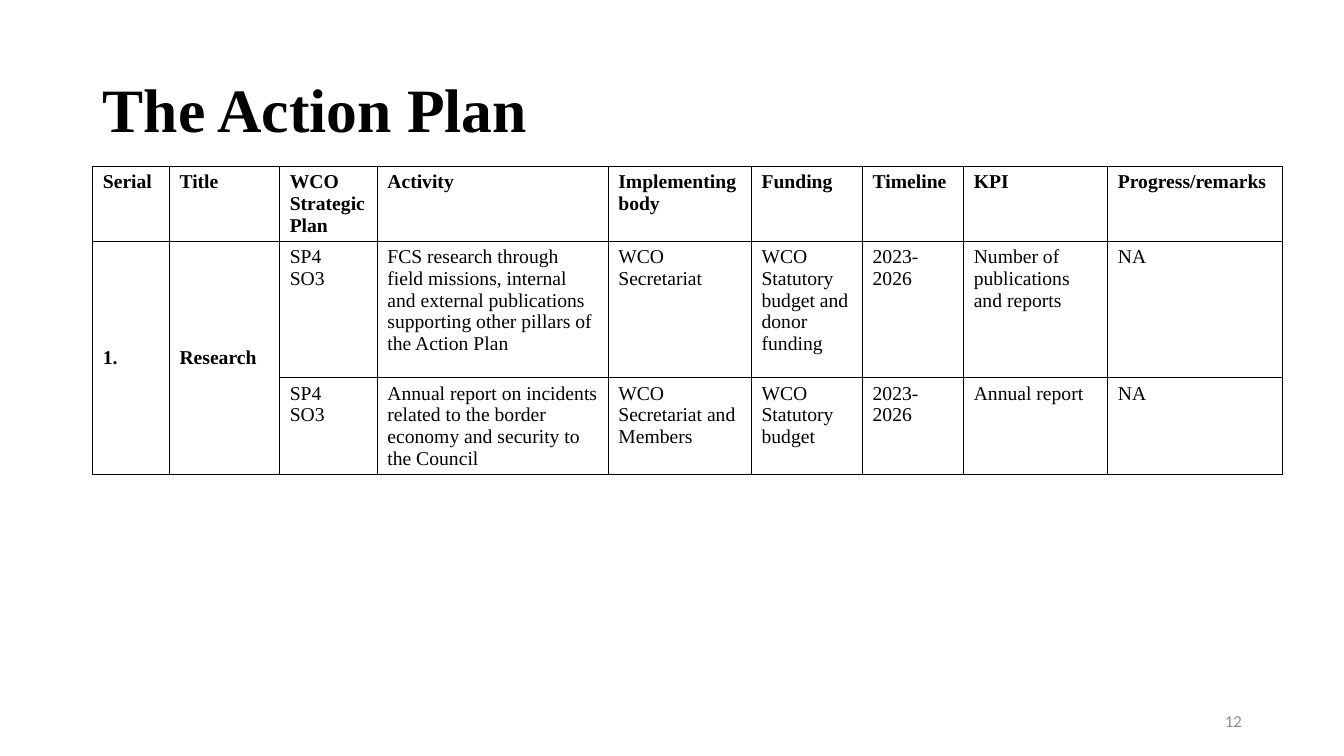
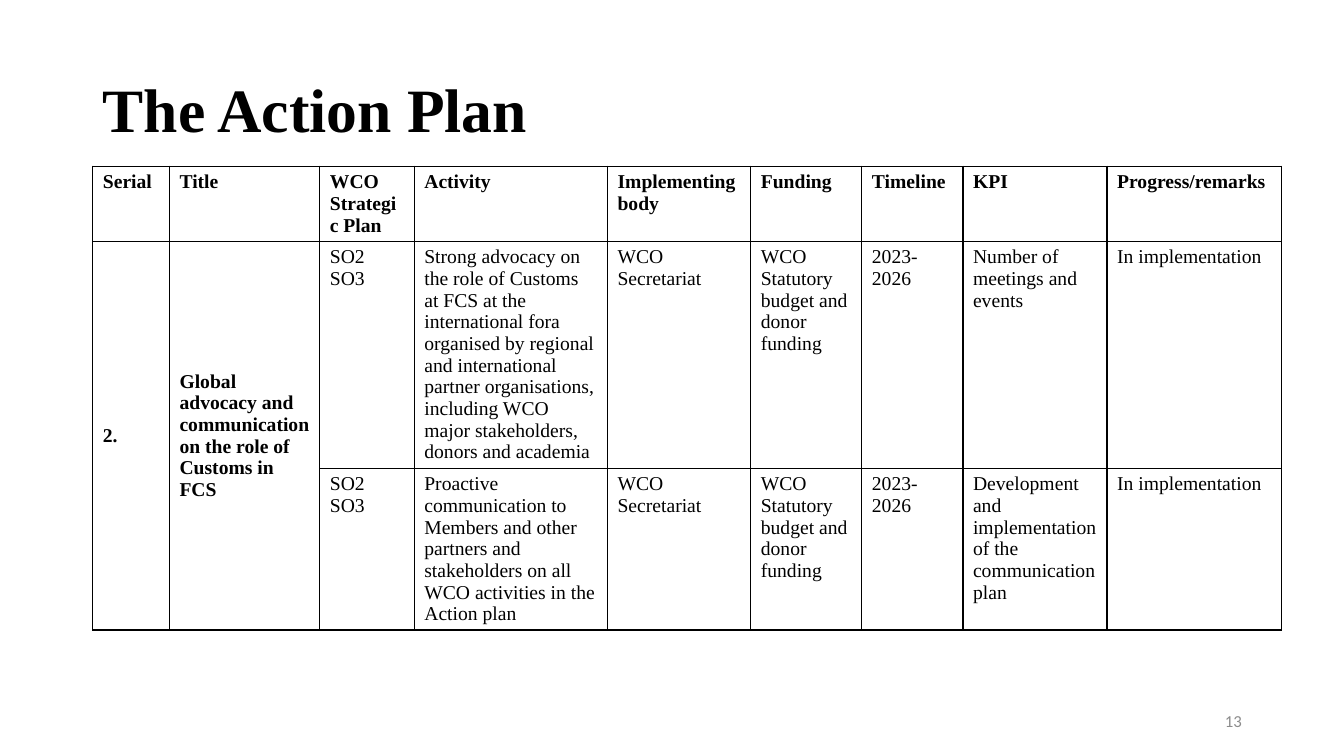
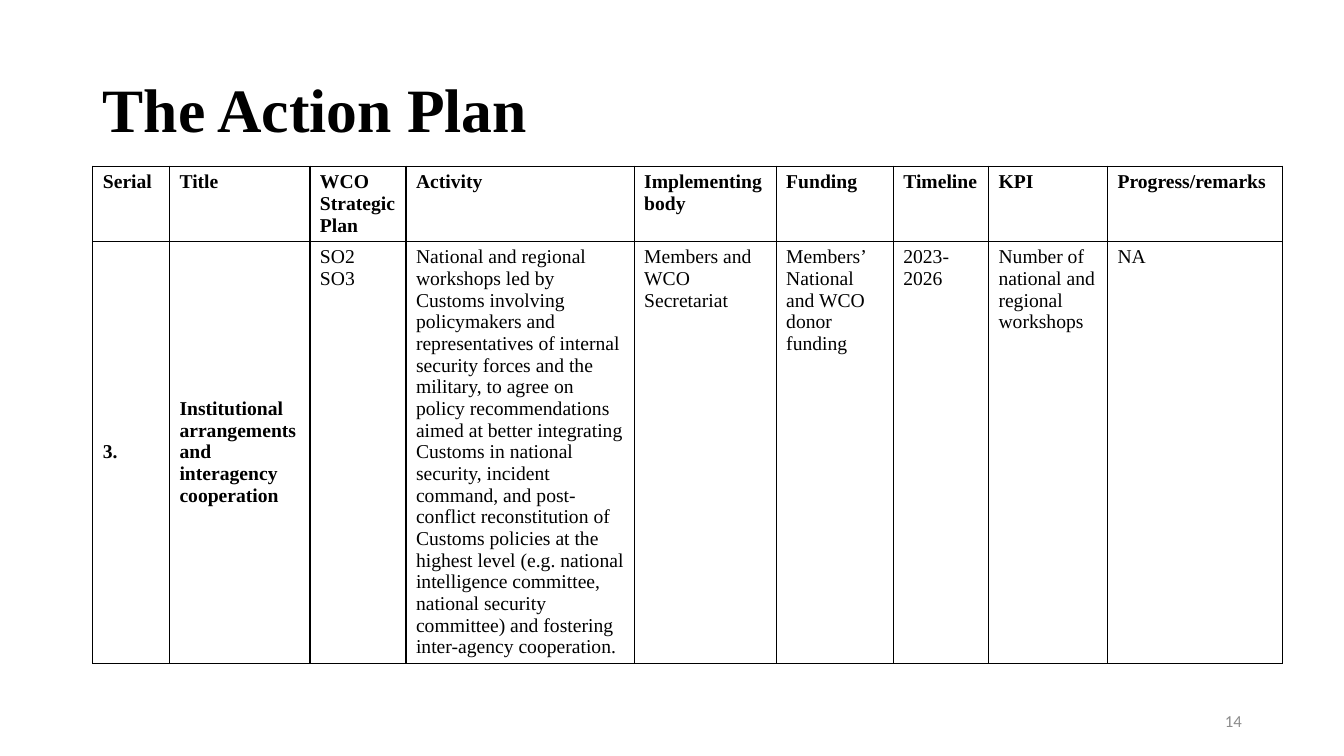
import pptx
import pptx.util
import pptx.dml.color
import pptx.enum.text
import pptx.oxml
import pptx.oxml.ns

Cm = pptx.util.Cm
Pt = pptx.util.Pt
RGBColor = pptx.dml.color.RGBColor
Align = pptx.enum.text.PP_ALIGN
Anchor = pptx.enum.text.MSO_ANCHOR

BLACK = RGBColor(0x00, 0x00, 0x00)
GREY = RGBColor(0x8C, 0x8C, 0x8C)
SERIF = "Times New Roman"
SANS = "Calibri"
LEFT = 2.34
TITLE = "The Action Plan"
HEAD = ["Serial", "Title", "WCO Strategic Plan", "Activity", "Implementing body",
        "Funding", "Timeline", "KPI", "Progress/remarks"]
YEARS = "2023-2026"
STAFF = "WCO Secretariat"
BUDGET = "WCO Statutory budget"
DONOR = "WCO Statutory budget and donor funding"

PLANS = [
    {
        "page": 12,
        "cols": [1.93, 2.78, 2.46, 5.82, 3.61, 2.8, 2.55, 3.63, 4.4],
        "rows": [1.52, 3.43, 1.09],
        "body": [
            ["1.", "Research", "SP4\nSO3",
             "FCS research through field missions, internal and external publications "
             "supporting other pillars of the Action Plan",
             STAFF, DONOR, YEARS, "Number of publications and reports", "NA"],
            ["", "", "SP4\nSO3",
             "Annual report on incidents related to the border economy and security "
             "to the Council",
             "WCO Secretariat and Members", BUDGET, YEARS, "Annual report", "NA"],
        ],
    },
    {
        "page": 13,
        "cols": [1.93, 3.79, 2.38, 4.87, 3.61, 2.8, 2.55, 3.63, 4.4],
        "rows": [1.52, 3.43, 1.09],
        "body": [
            ["2.", "Global advocacy and communication on the role of Customs in FCS",
             "SO2\nSO3",
             "Strong advocacy on the role of Customs at FCS at the international fora "
             "organised by regional and international partner organisations, including "
             "WCO major stakeholders, donors and academia",
             STAFF, DONOR, YEARS, "Number of meetings and events", "In implementation"],
            ["", "", "SO2\nSO3",
             "Proactive communication to Members and other partners and stakeholders "
             "on all WCO activities in the Action plan",
             STAFF, DONOR, YEARS,
             "Development and implementation of the communication plan",
             "In implementation"],
        ],
    },
    {
        "page": 14,
        "cols": [1.93, 3.54, 2.42, 5.75, 3.58, 2.95, 2.4, 3.0, 4.4],
        "rows": [1.52, 4.52],
        "body": [
            ["3.", "Institutional arrangements and interagency cooperation", "SO2\nSO3",
             "National and regional workshops led by Customs involving policymakers and "
             "representatives of internal security forces and the military, to agree on "
             "policy recommendations aimed at better integrating Customs in national "
             "security, incident command, and post-conflict reconstitution of Customs "
             "policies at the highest level (e.g. national intelligence committee, "
             "national security committee) and fostering inter-agency cooperation.",
             "Members and WCO Secretariat",
             "Members’\nNational and WCO donor funding", YEARS,
             "Number of national and regional workshops", "NA"],
        ],
    },
]


class Deck:
    def __init__(self):
        self.file = pptx.Presentation()
        self.file.slide_width = Cm(33.87)
        self.file.slide_height = Cm(19.05)
        self.slide = None

    def put(self, frame, text, size, font=SERIF, color=BLACK, bold=False,
            align=Align.LEFT):
        for i, line in enumerate(text.split("\n")):
            para = frame.add_paragraph() if i else frame.paragraphs[0]
            para.alignment = align
            run = para.add_run()
            run.text = line
            run.font.size = Pt(size)
            run.font.name = font
            run.font.bold = bold
            run.font.color.rgb = color

    def start(self, text):
        self.slide = self.file.slides.add_slide(self.file.slide_layouts[5])
        shape = self.slide.shapes.title
        shape.left, shape.top = Cm(LEFT), Cm(1.5)
        shape.width, shape.height = Cm(29.21), Cm(2.67)
        frame = shape.text_frame
        frame.auto_size = pptx.enum.text.MSO_AUTO_SIZE.NONE
        frame.vertical_anchor = Anchor.MIDDLE
        self.put(frame, text, 44, bold=True)
        frame.paragraphs[0].line_spacing = 0.9

    def border(self, cell):
        props = cell._tc.get_or_add_tcPr()
        space = pptx.oxml.ns.nsdecls("a")
        for i, side in enumerate("LRTB"):
            line = pptx.oxml.parse_xml(
                f'<a:ln{side} {space} w="12700"><a:solidFill>'
                f'<a:srgbClr val="{BLACK}"/></a:solidFill></a:ln{side}>')
            props.insert(i, line)

    def table(self, cols, rows, body):
        data = [HEAD] + body
        grid = self.slide.shapes.add_table(
            len(rows), len(cols), Cm(LEFT), Cm(4.19), Cm(sum(cols)), Cm(sum(rows))).table
        grid.first_row = False
        grid.horz_banding = False
        for col, width in zip(grid.columns, cols):
            col.width = Cm(width)
        for row, height in zip(grid.rows, rows):
            row.height = Cm(height)
        if len(body) > 1:
            for c in range(2):
                grid.cell(1, c).merge(grid.cell(len(body), c))
        for r, line in enumerate(data):
            for c, text in enumerate(line):
                cell = grid.cell(r, c)
                cell.fill.background()
                self.border(cell)
                label = c < 2
                if r and label:
                    cell.vertical_anchor = Anchor.MIDDLE
                if text:
                    self.put(cell.text_frame, text, 14, bold=r == 0 or label)

    def number(self, page):
        box = self.slide.shapes.add_textbox(Cm(23.93), Cm(17.65), Cm(7.62), Cm(1.02))
        frame = box.text_frame
        frame.word_wrap = True
        frame.vertical_anchor = Anchor.MIDDLE
        self.put(frame, str(page), 12, SANS, GREY, align=Align.RIGHT)


def main():
    deck = Deck()
    for plan in PLANS:
        deck.start(TITLE)
        deck.table(plan["cols"], plan["rows"], plan["body"])
        deck.number(plan["page"])
    deck.file.save("out.pptx")


if __name__ == "__main__":
    main()
